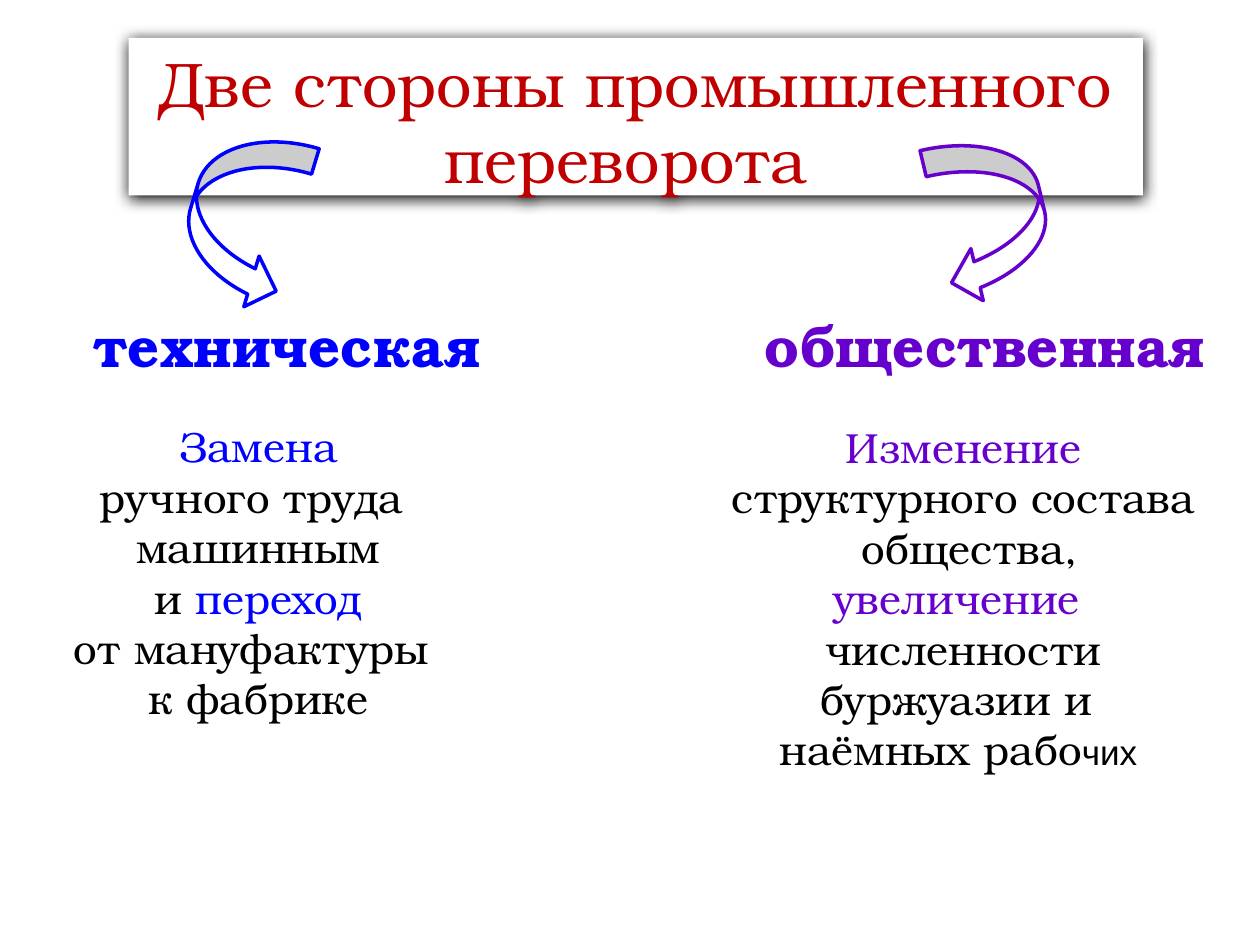
import pptx
import pptx.util
import pptx.dml.color
import pptx.enum.shapes
import pptx.enum.text
import lxml.etree

WIDTH, HEIGHT = 10, 7.5
SERIF, SANS = "TeX Gyre Bonum", "Arial"
COLORS = {"paper": "FFFFFF", "ink": "000000", "title": "C00000",
          "technical": "0000FF", "social": "6600CC"}
SHAPES = pptx.enum.shapes.MSO_SHAPE
FIT = pptx.enum.text.MSO_AUTO_SIZE


def color(name):
    return pptx.dml.color.RGBColor.from_string(COLORS[name])


def inches(box):
    return [pptx.util.Inches(length) for length in box]


def fill_paper(shape):
    shape.fill.solid()
    shape.fill.fore_color.rgb = color("paper")


def write(frame, lines, size, bold=False, wrap=True, fit=FIT.SHAPE_TO_FIT_TEXT,
          anchor=pptx.enum.text.MSO_ANCHOR.MIDDLE):
    """Each line is a list of (text, color name) or (text, color name, font, size)."""
    frame.word_wrap = wrap
    frame.auto_size = fit
    frame.vertical_anchor = anchor
    for index, line in enumerate(lines):
        para = frame.add_paragraph() if index else frame.paragraphs[0]
        para.alignment = pptx.enum.text.PP_ALIGN.CENTER
        for text, tint, *special in line:
            span = para.add_run()
            span.text = text
            face, points = special or (SERIF, size)
            span.font.name = face
            span.font.size = pptx.util.Pt(points)
            span.font.bold = bold
            span.font.color.rgb = color(tint)


def add_soft_shadow(shape):
    namespace = "http://schemas.openxmlformats.org/drawingml/2006/main"
    shape.shadow.inherit = False
    effects = shape.element.spPr.find(f"{{{namespace}}}effectLst")
    shadow = lxml.etree.SubElement(
        effects, f"{{{namespace}}}outerShdw", blurRad=str(pptx.util.Pt(8.5)),
        dist=str(pptx.util.Pt(1)), dir="5400000", algn="ctr", rotWithShape="0")
    lxml.etree.SubElement(shadow, f"{{{namespace}}}srgbClr", val=COLORS["ink"])


def title_banner(page, box):
    title = page.shapes.title
    title.left, title.top, title.width, title.height = inches(box)
    fill_paper(title)
    add_soft_shadow(title)
    write(title.text_frame, [[("Две стороны промышленного переворота ", "title")]],
          36, fit=FIT.NONE)
    title.text_frame.margin_top = pptx.util.Inches(0.11)


def curved_arrow(page, box, kind, turn, tint):
    arrow = page.shapes.add_shape(kind, *inches(box))
    arrow.rotation = turn
    arrow.shadow.inherit = False
    fill_paper(arrow)
    arrow.line.color.rgb = color(tint)
    arrow.line.width = pptx.util.Pt(2)


def heading(page, box, text, tint):
    label = page.shapes.add_textbox(*inches(box))
    write(label.text_frame, [[(text, tint)]], 32, bold=True, wrap=False,
          anchor=pptx.enum.text.MSO_ANCHOR.TOP)


def description(page, box, lines, wrap):
    panel = page.shapes.add_textbox(*inches(box))
    write(panel.text_frame, lines, 24, wrap=wrap)


def main():
    deck = pptx.Presentation()
    deck.slide_width, deck.slide_height = inches((WIDTH, HEIGHT))
    page = deck.slides.add_slide(deck.slide_layouts[5])
    heading_top, text_top = 2.42, 3.28

    title_banner(page, (1.02, HEIGHT * 0.04, 8.05, HEIGHT / 6))
    curved_arrow(page, (1.51, 1.03, 0.84, 1.39), SHAPES.CURVED_RIGHT_ARROW,
                 16.8, "technical")
    curved_arrow(page, (7.44, 1.08, 0.85, 1.29), SHAPES.CURVED_LEFT_ARROW,
                 346.6, "social")
    heading(page, (0.62, heading_top, 3.31, 0.64), "техническая", "technical")
    heading(page, (5.94, heading_top, 3.75, 0.64), "общественная", "social")
    description(page, (0.47, text_top, 3.16, 2.52), [
        [("Замена", "technical")],
        [("ручного труда ", "ink")],
        [("машинным", "ink")],
        [("и ", "ink"), ("переход", "technical")],
        [("от мануфактуры ", "ink")],
        [("к фабрике", "ink")],
    ], wrap=False)
    description(page, (5.7, text_top, 3.89, 2.93), [
        [("Изменение", "social")],
        [("структурного состава", "ink")],
        [(" общества,", "ink")],
        [("увеличение ", "social")],
        [("численности", "ink")],
        [("буржуазии и ", "ink")],
        [("наёмных рабо", "ink"), ("чих ", "ink", SANS, 20)],
    ], wrap=True)
    deck.save("out.pptx")


if __name__ == "__main__":
    main()
